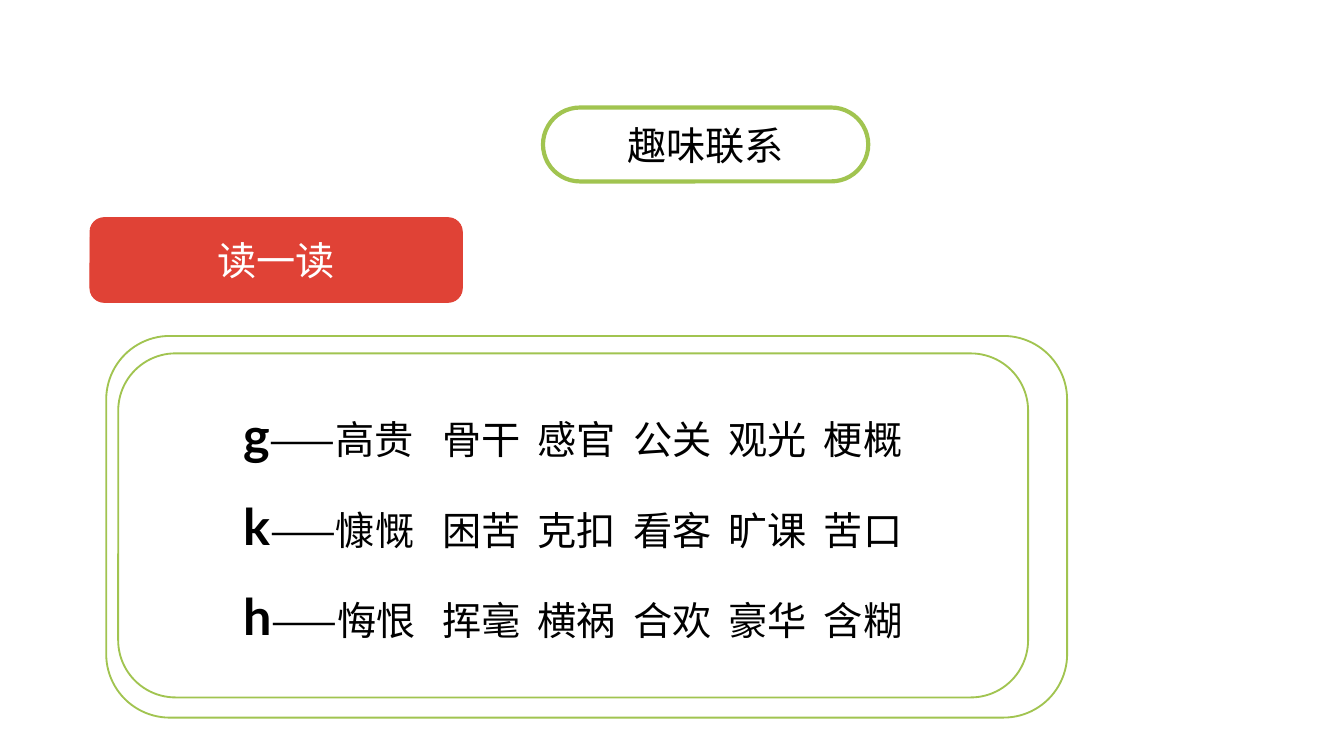
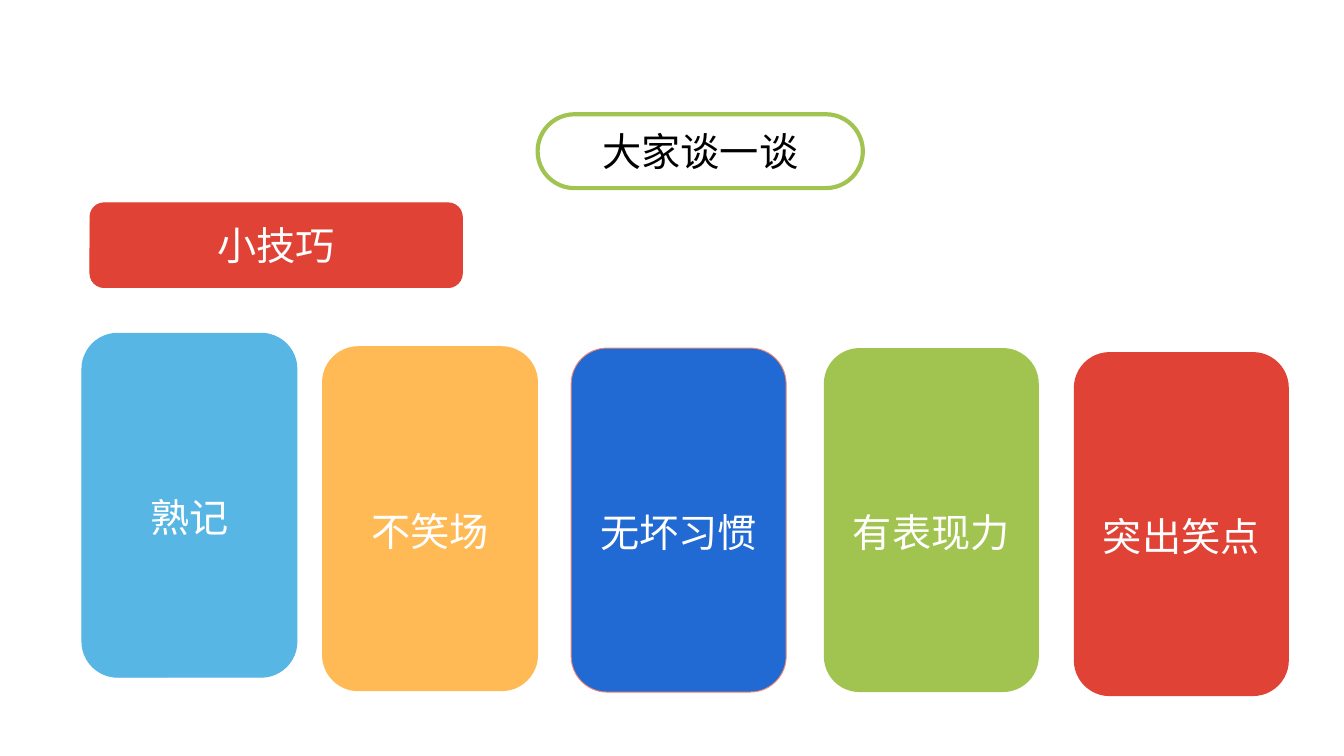
from lxml import etree
from pptx import Presentation
from pptx.dml.color import RGBColor
from pptx.enum.shapes import MSO_SHAPE
from pptx.enum.text import MSO_ANCHOR, MSO_AUTO_SIZE, PP_ALIGN
from pptx.oxml.ns import qn
from pptx.util import Inches, Pt

ROUNDED = MSO_SHAPE.ROUNDED_RECTANGLE
MIDDLE, TOP = MSO_ANCHOR.MIDDLE, MSO_ANCHOR.TOP
CENTER, LEFT = PP_ALIGN.CENTER, PP_ALIGN.LEFT
NO_FIT, GROW = MSO_AUTO_SIZE.NONE, MSO_AUTO_SIZE.SHAPE_TO_FIT_TEXT

COLORS = {
    "black": "000000", "white": "FFFFFF", "green": "A1C450", "red": "E04236",
    "sky": "58B6E5", "amber": "FFBA55", "blue": "2169D3", "coral": "F18870",
}
CJK, LATIN = "Noto Sans CJK SC", "Lato"
BODY = {"name": CJK, "size": Pt(21), "bold": False}
INITIAL = {"name": LATIN, "size": Pt(27), "bold": True}
FRAME = {
    "word_wrap": True, "auto_size": NO_FIT, "vertical_anchor": MIDDLE,
    "margin_left": Inches(0.07), "margin_right": Inches(0.07),
    "margin_top": Inches(0.04), "margin_bottom": Inches(0.04),
}


def apply(target, values):
    for name, value in values.items():
        setattr(target, name, value)


def rgb(name):
    return RGBColor.from_string(COLORS[name])


class Deck:
    def __init__(self):
        self.prs = Presentation()
        self.prs.slide_width = Inches(10)
        self.prs.slide_height = Inches(10 * 9 / 16)
        self.s = None

    def slide(self, title, left, top):
        self.s = self.prs.slides.add_slide(self.prs.slide_layouts[5])
        box = (left, top, 2.42, 0.55)
        pill = self.panel(*box, line="green", line_width=2.25)
        pill.adjustments[0] = 0.5
        sp = self.s.shapes.title
        apply(sp, dict(zip(("left", "top", "width", "height"), map(Inches, box))))
        self.label(sp, title, "black")

    def panel(self, left, top, width, height, fill=None, line=None, line_width=0.5):
        sp = self.s.shapes.add_shape(ROUNDED, *map(Inches, (left, top, width, height)))
        sp.shadow.inherit = False
        if fill:
            sp.fill.solid()
            sp.fill.fore_color.rgb = rgb(fill)
        else:
            sp.fill.background()
        if line:
            sp.line.color.rgb = rgb(line)
            sp.line.width = Pt(line_width)
        else:
            sp.line.fill.background()
        return sp

    def run(self, p, text, color, font=BODY):
        r = p.add_run()
        r.text = text
        apply(r.font, font)
        r.font.color.rgb = rgb(color)
        etree.SubElement(r.font._element, qn("a:ea"), typeface=font["name"])

    def label(self, sp, text, color, spacing=1.0):
        tf = sp.text_frame
        apply(tf, FRAME)
        p = tf.paragraphs[0]
        apply(p, {"alignment": CENTER, "line_spacing": spacing})
        self.run(p, text, color)

    def badge(self, text, top):
        self.label(self.panel(0.67, top, 2.77, 0.63, "red", "red"), text, "white")

    def card(self, text, left, top, fill, line):
        sp = self.panel(left, top, 1.6, 2.56, fill, line)
        self.label(sp, text, "white", 1.5)

    def word_rows(self, rows, left, top, width, height):
        sp = self.s.shapes.add_textbox(*map(Inches, (left, top, width, height)))
        tf = sp.text_frame
        apply(tf, {**FRAME, "auto_size": GROW, "vertical_anchor": TOP,
                   "margin_left": Inches(1.73)})
        for i, (initial, words) in enumerate(rows):
            p = tf.add_paragraph() if i else tf.paragraphs[0]
            apply(p, {"alignment": LEFT, "line_spacing": 1.5})
            tabs = etree.SubElement(p._p.get_or_add_pPr(), qn("a:tabLst"))
            for column in range(len(words) - 1):
                stop = Inches(1.48 + 0.71 * column)
                etree.SubElement(tabs, qn("a:tab"), pos=str(stop), algn="l")
            self.run(p, initial, "black", INITIAL)
            self.run(p, "——" + "\t".join(words), "black")


def main():
    deck = Deck()

    deck.slide("趣味联系", 4.04, 0.8)
    deck.word_rows([
        ("g", ["高贵", "骨干", "感官", "公关", "观光", "梗概"]),
        ("k", ["慷慨", "困苦", "克扣", "看客", "旷课", "苦口"]),
        ("h", ["悔恨", "挥毫", "横祸", "合欢", "豪华", "含糊"]),
    ], 0.08, 2.74, 8.38, 2.12)
    deck.badge("读一读", 1.62)
    for box in ((0.88, 2.63, 6.77, 2.56), (0.79, 2.5, 7.15, 2.84)):
        deck.panel(*box, line="green", line_width=1)

    deck.slide("大家谈一谈", 4, 0.85)
    deck.badge("小技巧", 1.51)
    for tip in (
        ("熟记", 0.61, 2.48, "sky", "sky"),
        ("不笑场", 2.4, 2.58, "amber", "amber"),
        ("无坏习惯", 4.25, 2.59, "blue", "coral"),
        ("有表现力", 6.13, 2.59, "green", None),
        ("突出笑点", 7.99, 2.62, "red", None),
    ):
        deck.card(*tip)

    deck.prs.save("out.pptx")


if __name__ == "__main__":
    main()
